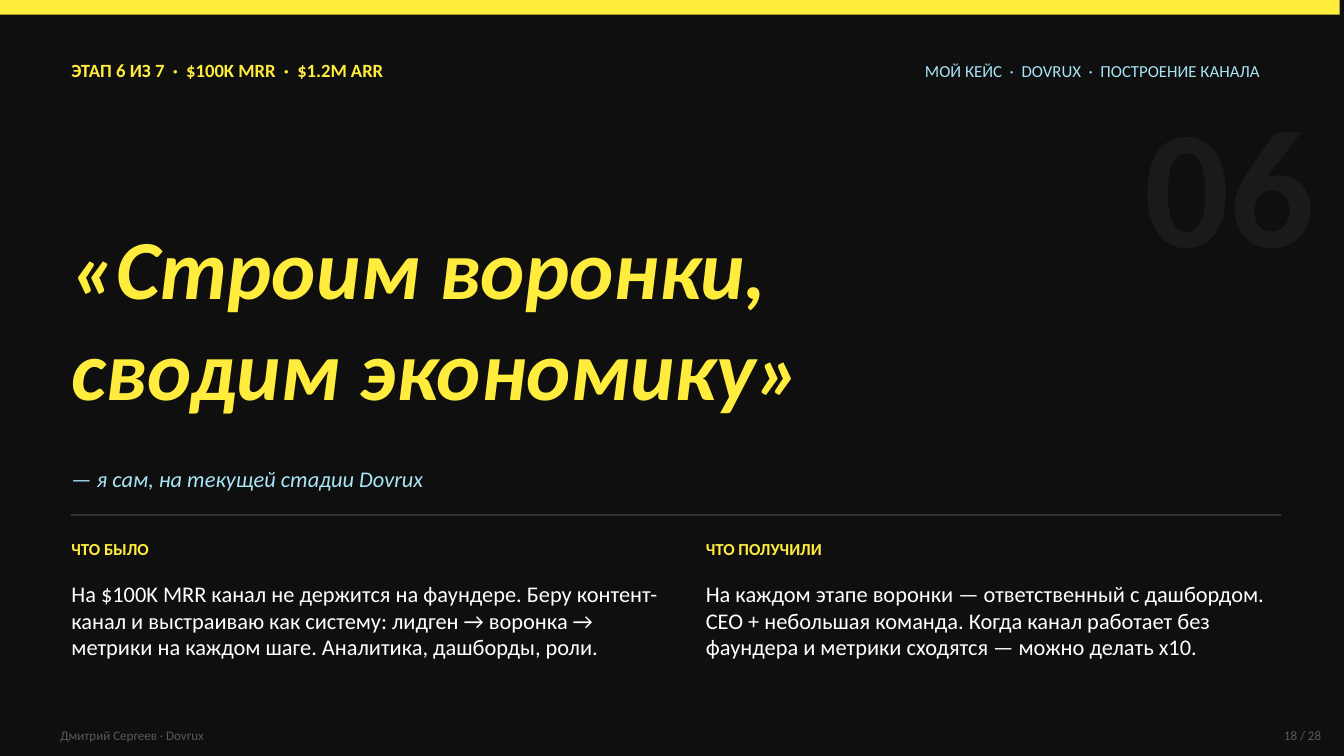
from lxml import etree
from pptx import Presentation
from pptx import util as u
from pptx.dml.color import RGBColor
from pptx.enum import shapes, text
from pptx.oxml.ns import qn

DARK, YELLOW, BLUE, WHITE = "0F0F0F", "FFEC3D", "A8E5F5", "FFFFFF"
RULE, MUTED, GHOST = "333333", "5A5A5A", "1A1A1A"
LEFT, WIDTH = 1.35, 22.86


def rgb(value):
    return RGBColor.from_string(value)


class Deck:
    """Holds the style and the current slide; lengths are in centimetres."""

    font = "Calibri"

    def __init__(self, width, height):
        self.prs = Presentation()
        self.prs.slide_width, self.prs.slide_height = u.Cm(width), u.Cm(height)

    def add_slide(self, background):
        self.s = self.prs.slides.add_slide(self.prs.slide_layouts[5])
        fill = self.s.background.fill
        fill.solid()
        fill.fore_color.rgb = rgb(background)

    def style(self, p, size, color, bold=False, italic=False, right=False):
        p.alignment = text.PP_ALIGN.RIGHT if right else text.PP_ALIGN.LEFT
        f = p.font
        f.name, f.size, f.bold, f.italic = self.font, u.Pt(size), bold, italic
        f.color.rgb = rgb(color)

    def frame(self, sp, anchor):
        tf = sp.text_frame
        tf.word_wrap = True
        tf.auto_size = text.MSO_AUTO_SIZE.NONE
        tf.vertical_anchor = anchor
        tf.margin_left = tf.margin_top = tf.margin_right = tf.margin_bottom = 0
        return tf

    def box(self, x, y, w, h, anchor=text.MSO_ANCHOR.MIDDLE):
        sp = self.s.shapes.add_textbox(u.Cm(x), u.Cm(y), u.Cm(w), u.Cm(h))
        return self.frame(sp, anchor)

    def title(self, x, y, w, h, lines, size, color):
        sp = self.s.shapes.title
        sp.left, sp.top, sp.width, sp.height = map(u.Cm, (x, y, w, h))
        tf = self.frame(sp, text.MSO_ANCHOR.MIDDLE)
        tf.text = "\n".join(lines)
        for p in tf.paragraphs:
            self.style(p, size, color, bold=True, italic=True)

    def label(self, x, y, w, h, words, size, color, **look):
        p = self.box(x, y, w, h).paragraphs[0]
        p.text = words
        self.style(p, size, color, **look)

    def column(self, x, y, w, h, heading, body):
        tf = self.box(x, y, w, h, text.MSO_ANCHOR.TOP)
        p = tf.paragraphs[0]
        p.text = heading
        p.space_after = u.Pt(11)
        self.style(p, 9, YELLOW, bold=True)
        p = tf.add_paragraph()
        p.text = body
        self.style(p, 12, WHITE)

    def bar(self, x, y, w, h, color):
        sp = self.s.shapes.add_shape(
            shapes.MSO_SHAPE.RECTANGLE, u.Cm(x), u.Cm(y), u.Cm(w), u.Cm(h))
        sp.shadow.inherit = False
        sp.fill.solid()
        sp.fill.fore_color.rgb = rgb(color)
        sp.line.fill.background()

    def rule(self, x, y, w, color):
        line = self.s.shapes.add_connector(
            shapes.MSO_CONNECTOR.STRAIGHT, u.Cm(x), u.Cm(y), u.Cm(x + w), u.Cm(y))
        line.line.color.rgb = rgb(color)
        line.line.width = u.Pt(1)
        etree.SubElement(line._element.spPr, qn("a:effectLst"))


def main():
    deck = Deck(25.4, 14.29)
    deck.add_slide(DARK)

    # Top bar and header
    deck.bar(0, 0, 25.32, 0.28, YELLOW)
    deck.label(LEFT, 1.04, 15.24, 0.58, "ЭТАП 6 ИЗ 7  ·  $100K MRR  ·  $1.2M ARR",
               10, YELLOW, bold=True)
    deck.label(10.46, 1.04, 13.34, 0.58, "МОЙ КЕЙС  ·  DOVRUX  ·  ПОСТРОЕНИЕ КАНАЛА",
               9, BLUE, right=True)

    # Large stage number
    deck.label(17.22, 1.47, 7.62, 3.89, "06", 90, GHOST, bold=True, right=True)

    # Quote and its author
    deck.title(LEFT, 3.23, WIDTH, 5.51, ["«Строим воронки,", "сводим экономику»"],
               45, YELLOW)
    deck.label(LEFT, 8.66, WIDTH, 0.76, "— я сам, на текущей стадии Dovrux",
               12, BLUE, italic=True)
    deck.rule(LEFT, 9.73, WIDTH, RULE)

    # Before and after columns
    columns = [
        ("ЧТО БЫЛО",
         "На $100K MRR канал не держится на фаундере. Беру контент-канал и "
         "выстраиваю как систему: лидген → воронка → метрики на каждом шаге. "
         "Аналитика, дашборды, роли."),
        ("ЧТО ПОЛУЧИЛИ",
         "На каждом этапе воронки — ответственный с дашбордом. CEO + небольшая "
         "команда. Когда канал работает без фаундера и метрики сходятся — можно "
         "делать x10."),
    ]
    for i, (heading, body) in enumerate(columns):
        deck.column(LEFT + i * 11.99, 10.19, 11.23, 3.81, heading, body)

    # Footer
    deck.label(23.62, 13.61, 1.35, 0.58, "18 / 28", 7, MUTED, right=True)
    deck.label(1.14, 13.61, 9.53, 0.58, "Дмитрий Сергеев · Dovrux", 7, MUTED)

    deck.prs.save("out.pptx")


if __name__ == "__main__":
    main()
